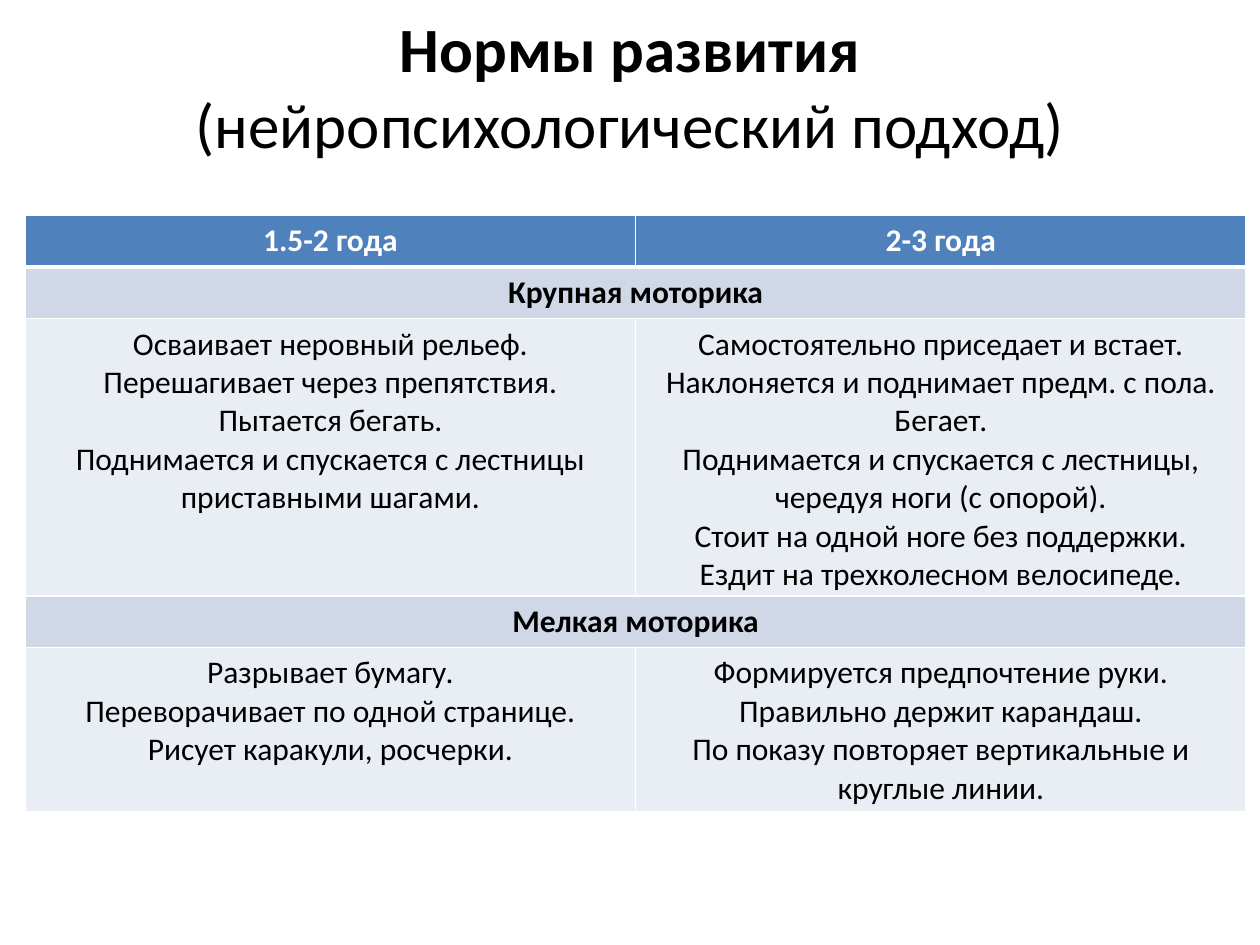
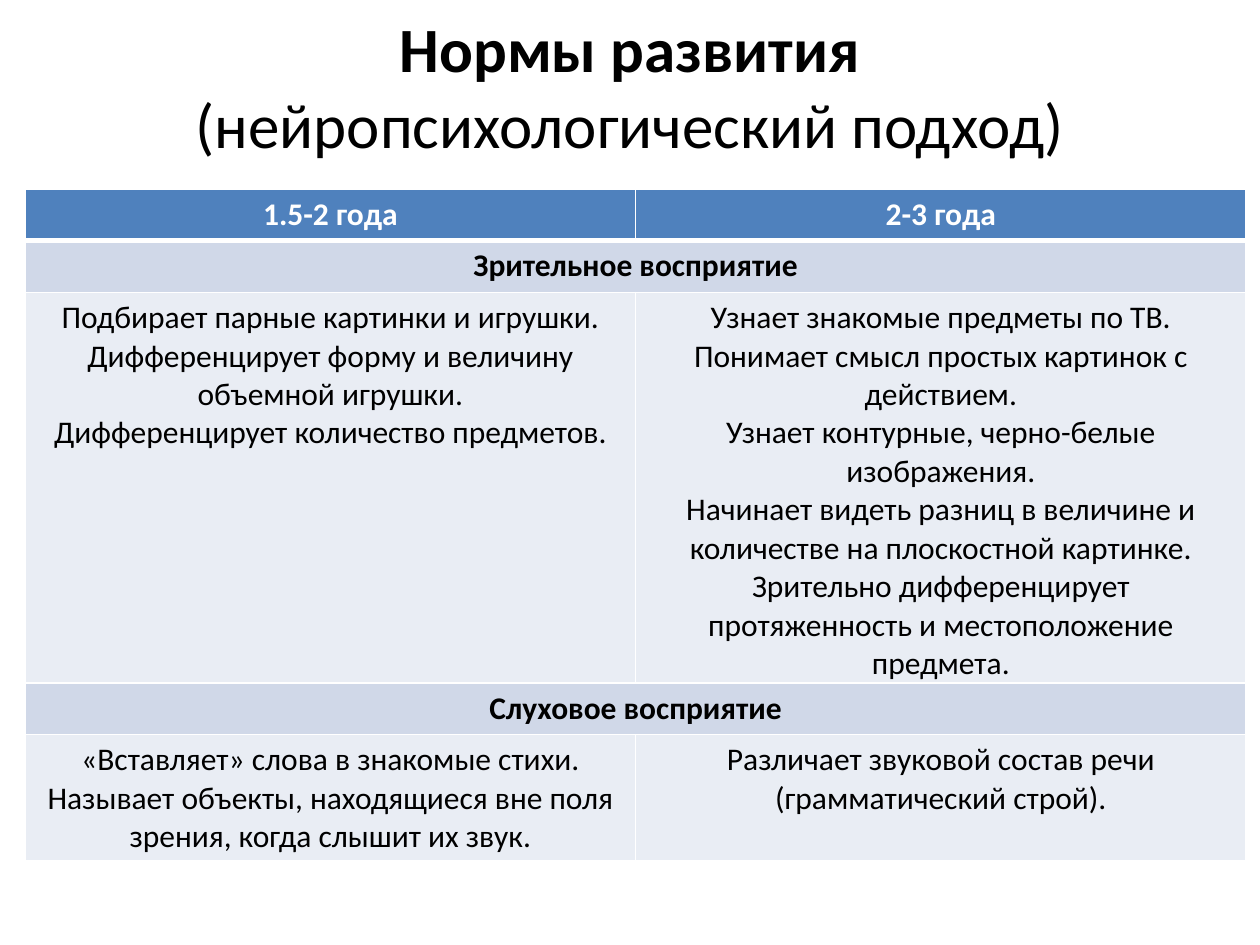
from lxml.etree import SubElement
from pptx import Presentation
from pptx.dml.color import RGBColor
from pptx.enum.text import MSO_ANCHOR, PP_ALIGN
from pptx.oxml.ns import qn
from pptx.util import Inches, Pt

COLORS = {
    "text": "000000",
    "white": "FFFFFF",
    "header": "4F81BD",
    "section": "D0D8E8",
    "body": "E9EDF4",
}
FONT = "Calibri"
TITLE_BOX = (0.5, 0.05, 9, 1.25)
TITLE_RUNS = [("Нормы развития ", True), ("(нейропсихологический подход)", False)]
AGES = ["1.5-2 года", "2-3 года"]
ROW_HEIGHT = 0.41

MOTOR_SKILLS = [
    ("Крупная моторика", [
        ["Осваивает неровный рельеф.",
         "Перешагивает через препятствия.",
         "Пытается бегать.",
         "Поднимается и спускается с лестницы приставными шагами."],
        ["Самостоятельно приседает и встает.",
         "Наклоняется и поднимает предм. с пола.",
         "Бегает.",
         "Поднимается и спускается с лестницы, чередуя ноги (с опорой).",
         "Стоит на одной ноге без поддержки.",
         "Ездит на трехколесном велосипеде."],
    ]),
    ("Мелкая моторика", [
        ["Разрывает бумагу.",
         "Переворачивает по одной странице.",
         "Рисует каракули, росчерки."],
        ["Формируется предпочтение руки.",
         "Правильно держит карандаш.",
         "По показу повторяет вертикальные и круглые линии."],
    ]),
]
PERCEPTION = [
    ("Зрительное восприятие", [
        ["Подбирает парные картинки и игрушки.",
         "Дифференцирует форму и величину объемной игрушки.",
         "Дифференцирует количество предметов."],
        ["Узнает знакомые предметы по ТВ.",
         "Понимает смысл простых картинок с действием.",
         "Узнает контурные, черно-белые изображения.",
         "Начинает видеть разниц в величине и количестве на плоскостной картинке.",
         "Зрительно дифференцирует протяженность и местоположение предмета."],
    ]),
    ("Слуховое восприятие", [
        ["«Вставляет» слова в знакомые стихи.",
         "Называет объекты, находящиеся вне поля зрения, когда слышит их звук."],
        ["Различает звуковой состав речи (грамматический строй)."],
    ]),
]


def write(frame, paragraphs, size=18, color="text"):
    """Fill a text frame with centred paragraphs, each a list of (text, bold) runs."""
    for i, runs in enumerate(paragraphs):
        paragraph = frame.paragraphs[0] if i == 0 else frame.add_paragraph()
        paragraph.alignment = PP_ALIGN.CENTER
        for text, bold in runs:
            run = paragraph.add_run()
            run.text = text
            run.font.name = FONT
            run.font.size = Pt(size)
            run.font.bold = bold
            run.font.color.rgb = RGBColor.from_string(COLORS[color])


def add_title(slide, box):
    frame = slide.shapes.add_textbox(*map(Inches, box)).text_frame
    frame.word_wrap = True
    frame.vertical_anchor = MSO_ANCHOR.MIDDLE
    write(frame, [TITLE_RUNS], size=36)


def set_borders(cell, top=1, bottom=1):
    widths = {"a:lnL": 1, "a:lnR": 1, "a:lnT": top, "a:lnB": bottom}
    properties = cell._tc.get_or_add_tcPr()
    for side, width in widths.items():
        line = SubElement(properties, qn(side), w=str(Pt(width)))
        fill = SubElement(line, qn("a:solidFill"))
        SubElement(fill, qn("a:srgbClr"), val=COLORS["white"])


def style_cell(cell, fill, **borders):
    set_borders(cell, **borders)
    cell.fill.solid()
    cell.fill.fore_color.rgb = RGBColor.from_string(COLORS[fill])


def add_norms_table(slide, box, sections):
    """Rows start at one line high and grow with their text."""
    row_count = 1 + 2 * len(sections)
    holder = slide.shapes.add_table(row_count, len(AGES), *map(Inches, box))
    table = holder.table
    table.horz_banding = False
    for row in table.rows:
        row.height = Inches(ROW_HEIGHT)
    holder.height = Inches(box[3])

    for col, age in enumerate(AGES):
        header = table.cell(0, col)
        style_cell(header, "header", bottom=3)
        write(header.text_frame, [[(age, True)]], color="white")

    for i, (name, skills_by_age) in enumerate(sections):
        name_row = 1 + 2 * i
        for col, skills in enumerate(skills_by_age):
            style_cell(table.cell(name_row, col), "section", top=3 if i == 0 else 1)
            skills_cell = table.cell(name_row + 1, col)
            style_cell(skills_cell, "body")
            write(skills_cell.text_frame, [[(skill, False)] for skill in skills])
        section = table.cell(name_row, 0)
        section.merge(table.cell(name_row, len(AGES) - 1))
        write(section.text_frame, [[(name, True)]])


def add_norms_slide(deck, table_box, sections):
    slide = deck.slides.add_slide(deck.slide_layouts[6])
    add_title(slide, TITLE_BOX)
    add_norms_table(slide, table_box, sections)


def main():
    deck = Presentation()
    deck.slide_width, deck.slide_height = Inches(10), Inches(7.5)
    add_norms_slide(deck, (0.2, 1.71, 9.69, 4.72), MOTOR_SKILLS)
    add_norms_slide(deck, (0.2, 1.5, 9.69, 5.32), PERCEPTION)
    deck.save("out.pptx")


if __name__ == "__main__":
    main()
